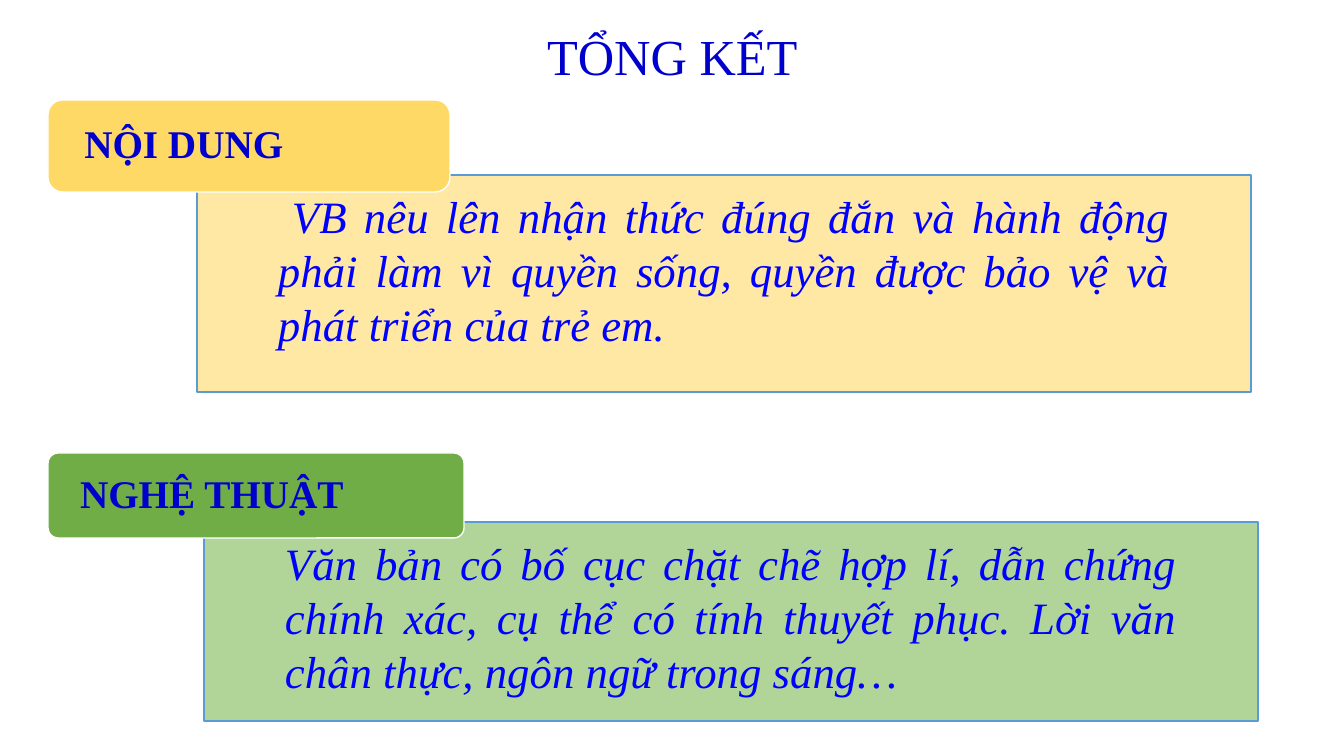
from lxml.etree import SubElement
from pptx import Presentation
from pptx.dml.color import RGBColor
from pptx.enum.shapes import MSO_SHAPE
from pptx.enum.text import MSO_ANCHOR, MSO_AUTO_SIZE, PP_ALIGN
from pptx.oxml.ns import qn
from pptx.util import Pt

EMU_PER_PX = 914400 / 100.8
FONT = "Times New Roman"
NAVY = RGBColor(0x00, 0x00, 0xCC)
BLUE = RGBColor(0x00, 0x00, 0xFF)
WHITE = RGBColor(0xFF, 0xFF, 0xFF)
BORDER = RGBColor(0x5B, 0x9B, 0xD5)
YELLOW = RGBColor(0xFF, 0xD9, 0x66)
PALE_YELLOW = RGBColor(0xFF, 0xE6, 0x99)
GREEN = RGBColor(0x70, 0xAD, 0x47)
PALE_GREEN = RGBColor(0xA9, 0xD1, 0x8E)


def px(length):
    return round(length * EMU_PER_PX)


def write_text(shape, text, size, color, margins, anchor, alignment,
               bold=False, italic=False):
    """Fill the shape with one paragraph; margins are left, top, right, bottom."""
    frame = shape.text_frame
    frame.word_wrap = True
    frame.auto_size = MSO_AUTO_SIZE.NONE
    frame.vertical_anchor = anchor
    (frame.margin_left, frame.margin_top,
     frame.margin_right, frame.margin_bottom) = map(px, margins)
    paragraph = frame.paragraphs[0]
    paragraph.alignment = alignment
    run = paragraph.add_run()
    run.text = text
    run.font.name = FONT
    run.font.size = Pt(size)
    run.font.bold = bold
    run.font.italic = italic
    run.font.color.rgb = color
    return paragraph


def add_panel(slide, preset, box, fill, border):
    shape = slide.shapes.add_shape(preset, *map(px, box))
    shape.shadow.inherit = False
    shape.fill.solid()
    shape.fill.fore_color.rgb = fill
    shape.line.color.rgb = border
    shape.line.width = Pt(1)
    return shape


def set_opacity(shape, percent):
    color = shape.fill._xPr.find(qn("a:solidFill"))[0]
    SubElement(color, qn("a:alpha")).set("val", str(percent * 1000))


def add_title(slide, box, text):
    title = slide.shapes.title
    title.left, title.top, title.width, title.height = map(px, box)
    paragraph = write_text(title, text, 36, NAVY, (10, 5, 10, 5),
                           MSO_ANCHOR.TOP, PP_ALIGN.LEFT)
    paragraph.line_spacing = 1.0


def add_section(slide, box, body, body_fill, label, label_fill, label_size,
                label_offset, label_margin, corner, indent=0):
    """Place a text panel in the box, with a label over its top left corner."""
    left, top, width, height = box
    panel = add_panel(slide, MSO_SHAPE.RECTANGLE, box, body_fill, BORDER)
    set_opacity(panel, 90)
    paragraph = write_text(panel, body, 32, BLUE, (81, 14, 81, 22),
                           MSO_ANCHOR.TOP, PP_ALIGN.JUSTIFY, italic=True)
    paragraph._p.get_or_add_pPr().set("indent", str(px(indent)))

    offset_x, offset_y = label_offset
    label_box = (left - offset_x, top - offset_y, *label_size)
    tab = add_panel(slide, MSO_SHAPE.ROUNDED_RECTANGLE, label_box, label_fill, WHITE)
    tab.adjustments[0] = corner
    paragraph = write_text(tab, label, 28, NAVY, (label_margin, 3, label_margin, 3),
                           MSO_ANCHOR.MIDDLE, PP_ALIGN.LEFT, bold=True)
    paragraph.line_spacing = 0.9


def main():
    presentation = Presentation()
    presentation.slide_width = px(1344)
    presentation.slide_height = px(756)
    slide = presentation.slides.add_slide(presentation.slide_layouts[5])
    add_title(slide, (537, 20, 289, 72), "TỔNG KẾT")
    add_section(
        slide, (197, 175, 1054, 217),
        "VB nêu lên nhận thức đúng đắn và hành động phải làm vì quyền sống, "
        "quyền được bảo vệ và phát triển của trẻ em.",
        PALE_YELLOW, "NỘI DUNG", YELLOW, label_size=(402, 92),
        label_offset=(149, 75), label_margin=32, corner=0.16, indent=14)
    add_section(
        slide, (204, 522, 1054, 199),
        "Văn bản có bố cục chặt chẽ hợp lí, dẫn chứng chính xác, cụ thể có tính "
        "thuyết phục. Lời văn chân thực, ngôn ngữ trong sáng…",
        PALE_GREEN, "NGHỆ THUẬT", GREEN, label_size=(416, 85),
        label_offset=(156, 69), label_margin=29, corner=0.12)
    presentation.save("out.pptx")


if __name__ == "__main__":
    main()
